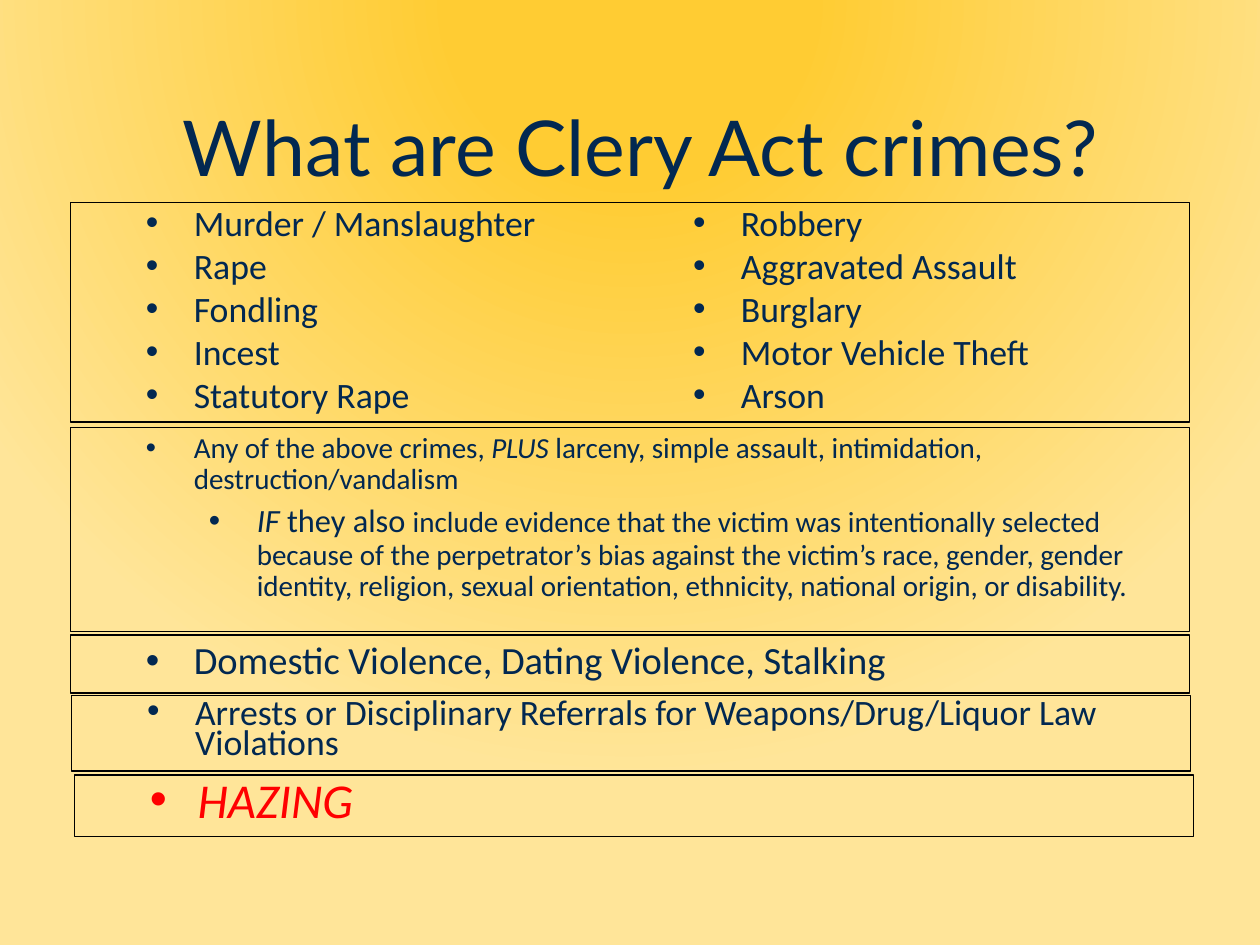
"""Build the slide that lists the Clery Act crimes."""
import lxml.etree
import pptx
import pptx.dml.color
import pptx.enum.shapes
import pptx.enum.text
import pptx.oxml
import pptx.oxml.ns
import pptx.util
from pptx.util import Inches, Pt

THEME = {
    "navy": pptx.dml.color.RGBColor.from_string("022851"),
    "red": pptx.dml.color.RGBColor.from_string("FF0000"),
    "border": pptx.dml.color.RGBColor.from_string("000000"),
    "gold": "FFCC33",
    "pale_gold": "FFE599",
    "title_font": "Lato",
    "body_font": "Calibri",
    "title": 44,
    "hazing": 27.8,
    "violence": 22,
    "crimes": 20.4,
    "condition": 18.5,
    "bias": 16.6,
}

CRIMES = [
    "Murder / Manslaughter", "Rape", "Fondling", "Incest", "Statutory Rape",
    "Robbery", "Aggravated Assault", "Burglary", "Motor Vehicle Theft", "Arson",
]
BIAS_CRIMES = [
    ("Any of the above crimes, ", "bias", False),
    ("PLUS ", "bias", True),
    ("larceny, simple assault, intimidation, destruction/vandalism", "bias", False),
]
BIAS_CONDITION = [
    ("IF ", "condition", True),
    ("they also ", "condition", False),
    ("include evidence that the victim was intentionally selected because of the "
     "perpetrator’s bias against the victim’s race, gender, gender identity, religion, "
     "sexual orientation, ethnicity, national origin, or disability.", "bias", False),
]
VIOLENCE = "Domestic Violence, Dating Violence, Stalking"
ARRESTS = "Arrests or Disciplinary Referrals for Weapons/Drug/Liquor Law Violations"

GROUPS = [
    (0.56, 1.61, 1.74, 2, 0.8, 5, "navy", [(1, [(crime, "crimes", False)]) for crime in CRIMES]),
    (0.56, 3.39, 1.62, 1, 0.9, 5, "navy", [(1, BIAS_CRIMES), (2, BIAS_CONDITION)]),
    (0.56, 5.04, 0.46, 1, 0.9, 5, "navy", [(1, [(VIOLENCE, "violence", False)])]),
    (0.57, 5.52, 0.6, 1, 0.7, 5, "navy", [(1, [(ARRESTS, "crimes", False)])]),
    (0.59, 6.15, 0.49, 1, 0.8, 0, "red", [(1, [("HAZING", "hazing", True)])]),
]


def add_bullet(paragraph, level):
    paragraph.level = level
    properties = paragraph._p.get_or_add_pPr()
    properties.set("marL", str(Inches(0.38 + 0.5 * level)))
    properties.set("indent", str(Inches(-0.38)))
    bullet_font = lxml.etree.SubElement(properties, pptx.oxml.ns.qn("a:buFont"))
    bullet_font.set("typeface", "Arial")
    lxml.etree.SubElement(properties, pptx.oxml.ns.qn("a:buChar")).set("char", "•")


presentation = pptx.Presentation()
presentation.slide_width, presentation.slide_height = Inches(10), Inches(7.5)
slide = presentation.slides.add_slide(presentation.slide_layouts[5])

slide.background.fill.solid()
background = slide._element.cSld.find(pptx.oxml.ns.qn("p:bg"))[0]
background.replace(background[0], pptx.oxml.parse_xml(
    f'<a:gradFill {pptx.oxml.ns.nsdecls("a")} rotWithShape="1"><a:gsLst>'
    f'<a:gs pos="23000"><a:srgbClr val="{THEME["gold"]}"/></a:gs>'
    f'<a:gs pos="99000"><a:srgbClr val="{THEME["pale_gold"]}"/></a:gs></a:gsLst>'
    '<a:path path="circle"><a:fillToRect l="50000" t="-80000" r="50000" b="180000"/></a:path>'
    '</a:gradFill>'))

title = slide.shapes.title
title.left, title.top = Inches(0.89), Inches(0.26)
title.width, title.height = Inches(8.39), Inches(1.32)
title.text_frame.text = "What are Clery Act crimes?"
title.text_frame.vertical_anchor = pptx.enum.text.MSO_ANCHOR.BOTTOM
heading = title.text_frame.paragraphs[0]
heading.alignment = pptx.enum.text.PP_ALIGN.CENTER
heading.line_spacing = 0.9
heading.font.name = THEME["title_font"]
heading.font.size = Pt(THEME["title"])
heading.font.color.rgb = THEME["navy"]

for left, top, height, columns, spacing, before, color, items in GROUPS:
    group = slide.shapes.add_shape(
        pptx.enum.shapes.MSO_SHAPE.RECTANGLE,
        Inches(left), Inches(top), Inches(8.88), Inches(height))
    group.shadow.inherit = False
    group.fill.background()
    group.line.color.rgb = THEME["border"]
    group.line.width = Pt(0.75)
    frame = group.text_frame
    frame.word_wrap = True
    frame.vertical_anchor = pptx.enum.text.MSO_ANCHOR.TOP
    frame.margin_bottom = 0
    frame._txBody.bodyPr.set("numCol", str(columns))
    for index, (level, phrases) in enumerate(items):
        item = frame.add_paragraph() if index else frame.paragraphs[0]
        item.alignment = pptx.enum.text.PP_ALIGN.LEFT
        item.line_spacing = spacing
        item.space_before = Pt(before)
        add_bullet(item, level)
        item.font.name = THEME["body_font"]
        item.font.color.rgb = THEME[color]
        for words, size, italic in phrases:
            phrase = item.add_run()
            phrase.text = words
            phrase.font.size = Pt(THEME[size])
            phrase.font.italic = italic

presentation.save("out.pptx")
